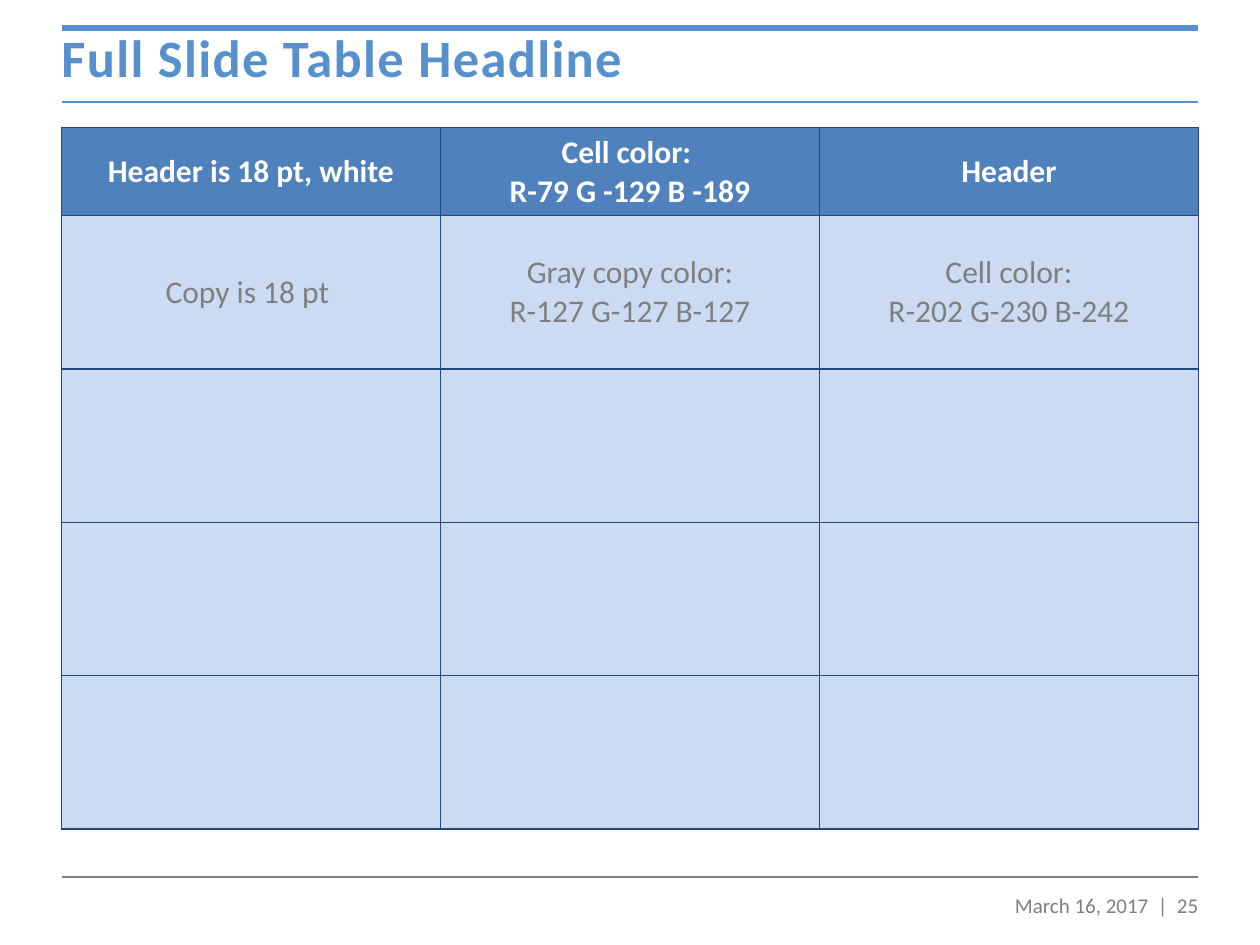
import dataclasses

import pptx
import pptx.dml.color
import pptx.enum.shapes
import pptx.enum.text
import pptx.oxml
import pptx.oxml.ns
import pptx.util

Cm = pptx.util.Cm
Pt = pptx.util.Pt
Align = pptx.enum.text.PP_ALIGN
RGB = pptx.dml.color.RGBColor.from_string


@dataclasses.dataclass(frozen=True)
class Theme:
    font: str = "Calibri"
    accent: str = "5691CE"
    rule_gray: str = "808080"
    copy_gray: str = "7F7F7F"
    white: str = "FFFFFF"
    header_fill: str = "4F81BD"
    body_fill: str = "CBDCF2"
    border: str = "22467F"
    headline_size: int = 30
    table_size: int = 18
    footer_size: int = 12


class SlideBuilder:
    """Draws rules, text and tables on the current slide in one theme."""

    def __init__(self, slide, theme):
        self.slide = slide
        self.theme = theme

    def rule(self, left, right, y, color, weight):
        rule = self.slide.shapes.add_connector(
            pptx.enum.shapes.MSO_CONNECTOR.STRAIGHT, Cm(left), Cm(y), Cm(right), Cm(y))
        rule.line.color.rgb = RGB(color)
        rule.line.width = Pt(weight)
        rule._element.spPr.append(pptx.oxml.parse_xml(
            f"<a:effectLst {pptx.oxml.ns.nsdecls('a')}/>"))

    def fill_text(self, frame, wording, size, color, bold=False, align=Align.LEFT,
                  line_spacing=None, tracking=0):
        frame.text = wording
        font_format = {"name": self.theme.font, "size": Pt(size), "bold": bold}
        paragraph_format = {"alignment": align, "line_spacing": line_spacing}
        for paragraph in frame.paragraphs:
            for name, value in paragraph_format.items():
                setattr(paragraph, name, value)
            for run in paragraph.runs:
                for name, value in font_format.items():
                    setattr(run.font, name, value)
                run.font.color.rgb = RGB(color)
                if tracking:
                    run._r.get_or_add_rPr().set("spc", str(round(tracking * 100)))

    def text(self, left, top, width, height, wording, **style):
        box = self.slide.shapes.add_textbox(Cm(left), Cm(top), Cm(width), Cm(height))
        box.text_frame.word_wrap = True
        self.fill_text(box.text_frame, wording, **style)

    def border(self, cell, weight):
        properties = cell._tc.get_or_add_tcPr()
        for side in "LRTB":
            properties.append(pptx.oxml.parse_xml(
                f'<a:ln{side} {pptx.oxml.ns.nsdecls("a")} w="{Pt(weight)}"><a:solidFill>'
                f'<a:srgbClr val="{self.theme.border}"/></a:solidFill></a:ln{side}>'))

    def table(self, left, top, width, header_height, row_height, rows):
        theme = self.theme
        heights = [header_height] + [row_height] * (len(rows) - 1)
        grid = self.slide.shapes.add_table(
            len(rows), len(rows[0]), Cm(left), Cm(top), Cm(width), Cm(sum(heights))).table
        for name, value in {"first_row": False, "horz_banding": False}.items():
            setattr(grid, name, value)
        for column in grid.columns:
            column.width = Cm(width / len(rows[0]))
        for index, (height, wordings) in enumerate(zip(heights, rows)):
            grid.rows[index].height = Cm(height)
            is_header = index == 0
            for cell, wording in zip(grid.rows[index].cells, wordings):
                cell.vertical_anchor = pptx.enum.text.MSO_ANCHOR.MIDDLE
                self.border(cell, 1)
                cell.fill.solid()
                cell.fill.fore_color.rgb = RGB(theme.header_fill if is_header else theme.body_fill)
                self.fill_text(cell.text_frame, wording, theme.table_size,
                               theme.white if is_header else theme.copy_gray,
                               bold=is_header, align=Align.CENTER)


def main():
    theme = Theme()
    deck = pptx.Presentation()
    for name, value in {"slide_width": Cm(25.4), "slide_height": Cm(19.05)}.items():
        setattr(deck, name, value)
    builder = SlideBuilder(deck.slides.add_slide(deck.slide_layouts[6]), theme)

    left, right = 1.24, 24.16
    for y, color, weight in [(2.06, theme.accent, 1), (0.56, theme.accent, 3.5),
                             (17.68, theme.rule_gray, 1)]:
        builder.rule(left, right, y, color, weight)
    builder.text(0.99, 0.53, 23.16, 1.35, "Full Slide Table Headline",
                 size=theme.headline_size, color=theme.accent, bold=True,
                 line_spacing=0.9, tracking=0.8)
    guide = [
        ["Header is 18 pt, white", "Cell color: \vR-79 G -129 B -189", "Header"],
        ["Copy is 18 pt ", "Gray copy color:\nR-127 G-127 B-127",
         "Cell color:\nR-202 G-230 B-242"],
    ] + [[""] * 3] * 3
    builder.table(left, 2.57, right - left, 1.75, 3.09, guide)
    builder.text(19.58, 17.86, 4.83, 0.97, "March 16, 2017  |  25",
                 size=theme.footer_size, color=theme.copy_gray, align=Align.RIGHT)
    deck.save("out.pptx")


if __name__ == "__main__":
    main()
